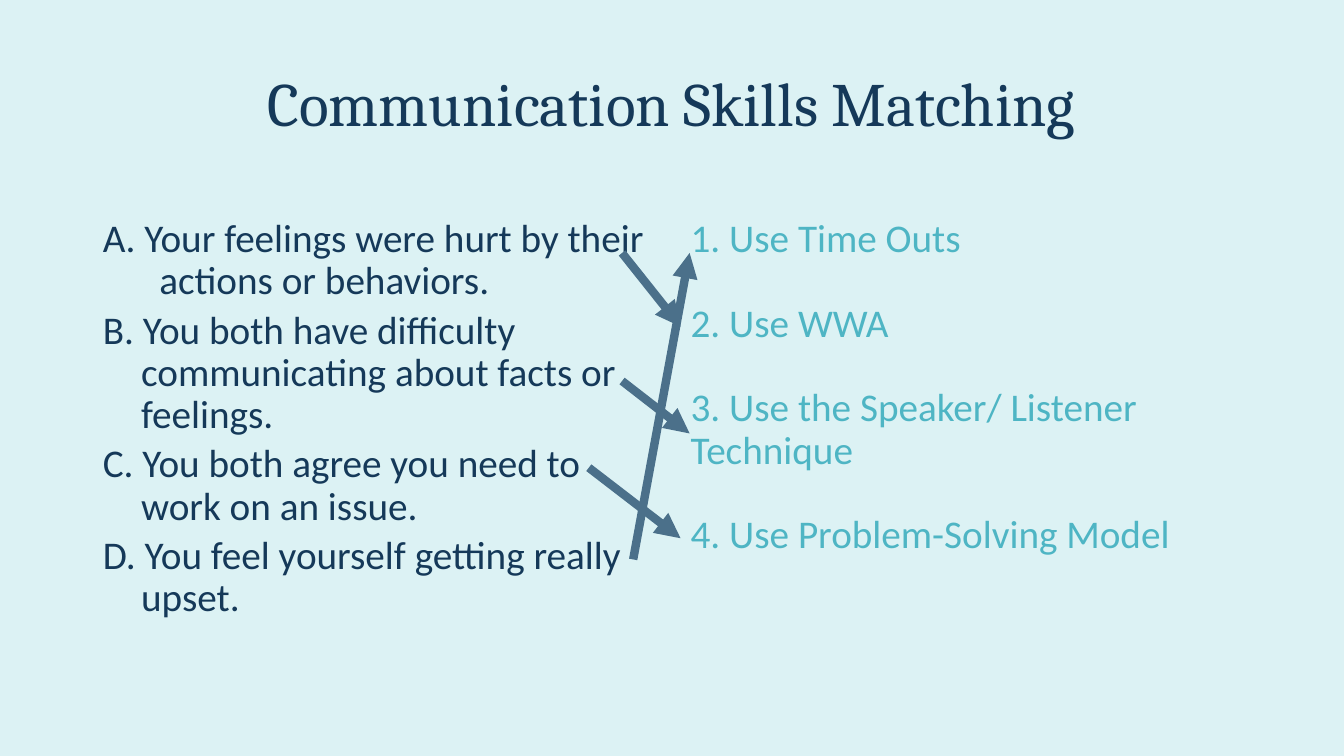
"""Build the communication skills matching slide."""
from lxml import etree
from pptx import Presentation
from pptx.dml.color import RGBColor
from pptx.enum.shapes import MSO_CONNECTOR
from pptx.enum.text import MSO_ANCHOR, MSO_AUTO_SIZE, PP_ALIGN
from pptx.oxml.ns import qn
from pptx.util import Pt

PX = 9144
NAVY, TEAL, SLATE, PALE = "153959", "4EB5C4", "4B708A", "DCF2F4"
STRAIGHT = MSO_CONNECTOR.STRAIGHT
MIDDLE, TOP = MSO_ANCHOR.MIDDLE, MSO_ANCHOR.TOP
CENTER, LEFT = PP_ALIGN.CENTER, PP_ALIGN.LEFT
NO_FIT = MSO_AUTO_SIZE.NONE


def color(target, hex_code):
    target.rgb = RGBColor.from_string(hex_code)


def write(placeholder, box, anchor, align, font, size, ink, gap, lines):
    placeholder.left, placeholder.top, placeholder.width, placeholder.height = [
        v * PX for v in box]
    frame = placeholder.text_frame
    frame.word_wrap = True
    frame.auto_size = NO_FIT
    frame.vertical_anchor = anchor
    for i, (text, hang) in enumerate(lines):
        paragraph = frame.add_paragraph() if i else frame.paragraphs[0]
        properties = paragraph._p.get_or_add_pPr()
        properties.set("marL", str(hang * PX))
        properties.set("indent", str(-hang * PX))
        etree.SubElement(properties, qn("a:buNone"))
        paragraph.alignment = align
        paragraph.line_spacing = 0.9
        paragraph.space_before = Pt(gap if i else 0)
        run = paragraph.add_run()
        run.text = text
        run.font.name = font
        run.font.size = Pt(size)
        color(run.font.color, ink)


prs = Presentation()
prs.slide_width, prs.slide_height = 1333 * PX, 750 * PX
slide = prs.slides.add_slide(prs.slide_layouts[3])
slide.background.fill.solid()
color(slide.background.fill.fore_color, PALE)
title, situations, skills = list(slide.placeholders)[:3]

write(title, (91, 33, 1150, 145), MIDDLE, CENTER, "Cambria", 44, NAVY, 0,
      [("Communication Skills Matching", 0)])
write(situations, (92, 212, 567, 476), TOP, LEFT, "Calibri", 28, NAVY, 4.8, [
    ("A. Your feelings were hurt by their actions or behaviors.", 56),
    ("B. You both have difficulty communicating about facts or feelings.", 38),
    ("C. You both agree you need to work on an issue.", 38),
    ("D. You feel yourself getting really upset.", 38),
])
write(skills, (675, 212, 567, 476), TOP, LEFT, "Calibri", 28, TEAL, 30.2, [
    ("1. Use Time Outs", 0),
    ("2. Use WWA", 0),
    ("3. Use the Speaker/ Listener Technique", 0),
    ("4. Use Problem-Solving Model", 0),
])

matches = [
    (617, 251, 675, 324),
    (617, 378, 684, 430),
    (584, 464, 675, 534),
    (628, 555, 684, 251),
]
for ends in matches:
    arrow = slide.shapes.add_connector(STRAIGHT, *[v * PX for v in ends])
    arrow.line.width = Pt(6)
    color(arrow.line.color, SLATE)
    etree.SubElement(arrow.line._get_or_add_ln(), qn("a:tailEnd"), type="triangle")
    etree.SubElement(arrow._element.spPr, qn("a:effectLst"))

prs.save("out.pptx")
